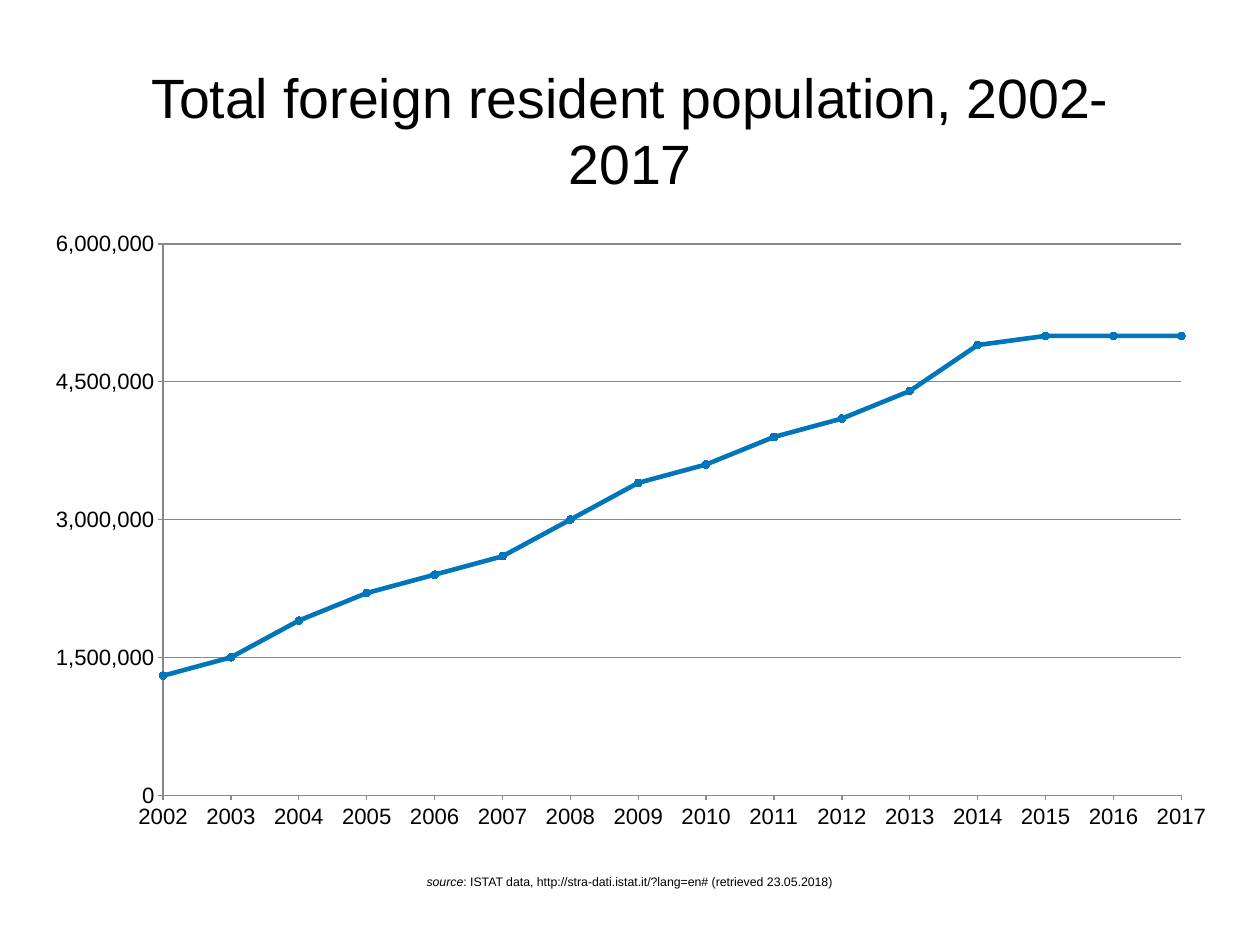
from lxml.etree import SubElement
from pptx import Presentation
from pptx.chart.data import CategoryChartData
from pptx.dml.color import RGBColor
from pptx.enum.chart import XL_CHART_TYPE, XL_MARKER_STYLE, XL_TICK_MARK
from pptx.enum.text import MSO_ANCHOR, PP_ALIGN
from pptx.oxml.ns import qn
from pptx.util import Pt

BLACK = RGBColor(0x00, 0x00, 0x00)
GREY = RGBColor(0x88, 0x88, 0x88)
BLUE = RGBColor(0x00, 0x76, 0xBA)
FONT = "Arial"

YEARS = [str(year) for year in range(2002, 2018)]
RESIDENTS_MILLIONS = [1.3, 1.5, 1.9, 2.2, 2.4, 2.6, 3.0, 3.4,
                      3.6, 3.9, 4.1, 4.4, 4.9, 5.0, 5.0, 5.0]
PLOT_AREA = {"x": 0.105, "y": 0.042, "w": 0.873, "h": 0.88}


def set_font(font, size):
    font.name = FONT
    font.size = Pt(size)
    font.color.rgb = BLACK


def add_centred_text(slide, box, size, runs, wrap=True):
    """Add one centred paragraph; runs are (text, italic) pairs."""
    shape = slide.shapes.add_textbox(*map(Pt, box))
    frame = shape.text_frame
    frame.word_wrap = wrap
    frame.vertical_anchor = MSO_ANCHOR.MIDDLE
    frame.margin_left = frame.margin_right = Pt(4)
    frame.margin_top = frame.margin_bottom = Pt(4)
    paragraph = frame.paragraphs[0]
    paragraph.alignment = PP_ALIGN.CENTER
    for text, italic in runs:
        run = paragraph.add_run()
        run.text = text
        set_font(run.font, size)
        run.font.italic = italic


def style_line(line, color, width):
    line.color.rgb = color
    line.width = Pt(width)


def style_axis(axis, number_format):
    set_font(axis.tick_labels.font, 18)
    axis.tick_labels.number_format = number_format
    axis.tick_labels.number_format_is_linked = False
    axis.major_tick_mark = XL_TICK_MARK.OUTSIDE
    axis.minor_tick_mark = XL_TICK_MARK.NONE
    style_line(axis.format.line, GREY, 1)


def fix_plot_area(chart):
    """Pin the inner plot area and start the line on the value axis."""
    plot_area = chart.element.find(".//" + qn("c:plotArea"))
    layout = plot_area.find(qn("c:layout"))
    if layout is None:
        layout = SubElement(plot_area, qn("c:layout"))
        plot_area.insert(0, layout)
    manual = SubElement(layout, qn("c:manualLayout"))
    SubElement(manual, qn("c:layoutTarget")).set("val", "inner")
    for side in "xy":
        SubElement(manual, qn(f"c:{side}Mode")).set("val", "edge")
    for side, share in PLOT_AREA.items():
        SubElement(manual, qn(f"c:{side}")).set("val", str(share))

    value_axis = plot_area.find(qn("c:valAx"))
    crossing = value_axis.find(qn("c:crossBetween"))
    if crossing is None:
        crossing = SubElement(value_axis, qn("c:crossBetween"))
        value_axis.find(qn("c:majorUnit")).addprevious(crossing)
    crossing.set("val", "midCat")


def add_population_chart(slide, box):
    data = CategoryChartData(number_format="#,##0")
    data.categories = YEARS
    data.add_series("Series 1", [round(value * 1_000_000) for value in RESIDENTS_MILLIONS])
    chart = slide.shapes.add_chart(
        XL_CHART_TYPE.LINE_MARKERS, *map(Pt, box), data).chart
    chart.has_title = False
    chart.has_legend = False
    set_font(chart.font, 10)

    style_axis(chart.category_axis, "General")
    value_axis = chart.value_axis
    style_axis(value_axis, "#,##0")
    value_axis.minimum_scale = 0
    value_axis.maximum_scale = 6_000_000
    value_axis.major_unit = 1_500_000
    value_axis.has_major_gridlines = True
    style_line(value_axis.major_gridlines.format.line, GREY, 1)

    chart.plots[0].vary_by_categories = False
    series = chart.plots[0].series[0]
    series.smooth = False
    style_line(series.format.line, BLUE, 3.75)
    series.marker.style = XL_MARKER_STYLE.CIRCLE
    series.marker.size = 6
    series.marker.format.fill.solid()
    series.marker.format.fill.fore_color.rgb = BLUE
    style_line(series.marker.format.line, BLUE, 1)
    fix_plot_area(chart)


def main():
    presentation = Presentation()
    presentation.slide_width = Pt(1024)
    presentation.slide_height = Pt(768)
    slide = presentation.slides.add_slide(presentation.slide_layouts[6])
    add_centred_text(slide, (75, 20, 874, 170), 45,
                     [("Total foreign resident population, 2002-2017", False)])
    add_population_chart(slide, (33, 177, 948, 509))
    add_centred_text(
        slide, (340.5, 706.5, 342, 19.5), 10,
        [("source", True),
         (": ISTAT data, http://stra-dati.istat.it/?lang=en# (retrieved 23.05.2018)", False)],
        wrap=False)
    presentation.save("out.pptx")


if __name__ == "__main__":
    main()
